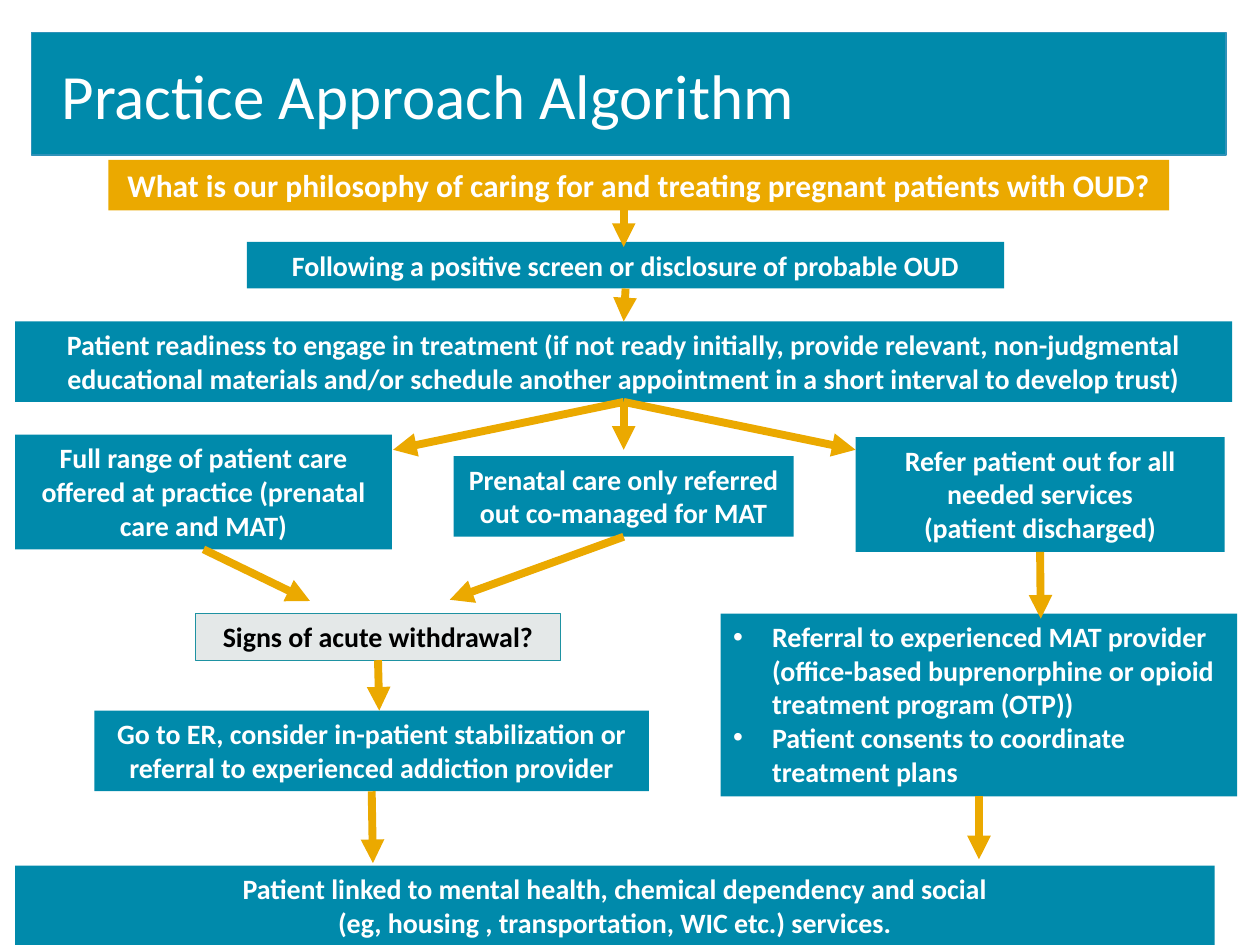
from lxml import etree
from pptx import Presentation
from pptx import util as u
from pptx.dml.color import RGBColor
from pptx.enum import shapes, text
from pptx.oxml.ns import qn

PX = 9144
TEAL = RGBColor(0x00, 0x8A, 0xAB)
TEAL_EDGE = RGBColor(0x30, 0x92, 0xB9)
GOLD = RGBColor(0xEB, 0xA9, 0x00)
GREY = RGBColor(0xE4, 0xE8, 0xE8)
GREY_EDGE = RGBColor(0x1E, 0x92, 0xA2)
WHITE = RGBColor(0xFF, 0xFF, 0xFF)
BLACK = RGBColor(0x00, 0x00, 0x00)


def px(*lengths):
    """Turn px lengths into EMU."""
    return [u.Emu(round(n * PX)) for n in lengths]


def add_run(p, words, size, color, bold=True):
    """Add one styled run to a paragraph."""
    r = p.add_run()
    r.text = words
    r.font.name = "Calibri"
    r.font.size = u.Pt(size)
    r.font.bold = bold
    r.font.color.rgb = color


def add_bullet(p):
    """Give a paragraph a round bullet with a hanging indent."""
    pPr = p._p.get_or_add_pPr()
    indent = px(31)[0]
    pPr.set("marL", str(indent))
    pPr.set("indent", str(-indent))
    etree.SubElement(pPr, qn("a:buFont")).set("typeface", "Arial")
    etree.SubElement(pPr, qn("a:buChar")).set("char", "•")


def add_box(s, box, lines=(), fill=TEAL, edge=None, color=WHITE, size=16, bullets=False):
    """Draw a filled rectangle holding one paragraph per line."""
    sp = s.shapes.add_shape(shapes.MSO_SHAPE.RECTANGLE, *px(*box))
    sp.shadow.inherit = False
    sp.fill.solid()
    sp.fill.fore_color.rgb = fill
    if edge:
        sp.line.color.rgb = edge
        sp.line.width = u.Pt(0.75)
    else:
        sp.line.fill.background()
    tf = sp.text_frame
    tf.word_wrap = True
    tf.vertical_anchor = text.MSO_ANCHOR.TOP
    for i, line in enumerate(lines):
        p = tf.paragraphs[0] if i == 0 else tf.add_paragraph()
        p.alignment = text.PP_ALIGN.LEFT if bullets else text.PP_ALIGN.CENTER
        if bullets:
            add_bullet(p)
        add_run(p, line, size, color)
    return sp


def add_arrow(s, end, start=None, source=None, target=None):
    """Draw a gold arrow from a point or a box's bottom to a point or a box's top."""
    cxn = s.shapes.add_connector(
        shapes.MSO_CONNECTOR.STRAIGHT, *px(*(start or end)), *px(*end))
    if source:
        cxn.begin_connect(source, 2)
    if target:
        cxn.end_connect(target, 0)
    cxn.line.color.rgb = GOLD
    cxn.line.width = u.Pt(4.5)
    etree.SubElement(cxn.line._get_or_add_ln(), qn("a:tailEnd")).set("type", "triangle")
    etree.SubElement(cxn._element.spPr, qn("a:effectLst"))


def title_banner(s, box):
    """Draw the title on its banner."""
    x, y, w, h = box
    add_box(s, box, edge=TEAL_EDGE)
    tf = s.shapes.add_textbox(*px(x + 14, y + 10, w - 14, h - 19)).text_frame
    tf.word_wrap = True
    tf.vertical_anchor = text.MSO_ANCHOR.MIDDLE
    add_run(tf.paragraphs[0], "Practice Approach Algorithm", 36, WHITE, bold=False)


def screening(s, box):
    """Draw the steps from philosophy to readiness and return the last one."""
    x, y, w, h = box
    add_box(s, (x + 74, y, 842, 40),
            ["What is our philosophy of caring for and treating pregnant patients with OUD?"],
            fill=GOLD, size=18)
    screen = add_box(s, (x + 184, y + 65, 601, 37),
                     ["Following a positive screen or disclosure of probable OUD"])
    ready = add_box(s, (x, y + h - 64, w, 64), [
        "Patient readiness to engage in treatment (if not ready initially, provide relevant, "
        "non-judgmental educational materials and/or schedule another appointment in a short "
        "interval to develop trust)"])
    mid = x + w / 2
    add_arrow(s, (mid, y + 69), start=(mid, y + 35))
    add_arrow(s, (mid, y + 128), source=screen, target=ready)
    return ready


def care_options(s, box, ready):
    """Draw the three care options and return them from left to right."""
    x, y, w, h = box
    full = add_box(s, (x, y, 299, 91),
                   ["Full range of patient care offered at practice (prenatal care and MAT)"])
    shared = add_box(s, (x + 348, y + 17, 270, 64),
                     ["Prenatal care only referred out co-managed for MAT"])
    refer = add_box(s, (x + w - 293, y + 2, 293, 91),
                    ["Refer patient out for all needed services", "(patient discharged)"])
    for tip in (300, 483, w - 293):
        add_arrow(s, (x + tip, y + 12), source=ready)
    return full, shared, refer


def withdrawal(s, box, full, shared):
    """Draw the acute withdrawal path and return its last step."""
    x, y, w, h = box
    signs = add_box(s, (x + 80, y, 290, 37), ["Signs of acute withdrawal?"],
                    fill=GREY, edge=GREY_EDGE, color=BLACK)
    er = add_box(s, (x, y + h - 64, w, 64), [
        "Go to ER, consider in-patient stabilization or referral to experienced addiction provider"])
    add_arrow(s, (x + 171, y - 10), source=full)
    add_arrow(s, (x + 282, y - 11), source=shared)
    add_arrow(s, (x + 226, y + h - 64), source=signs)
    return er


def referral(s, box, refer):
    """Draw the referral list and return it."""
    x, y, w, h = box
    sp = add_box(s, box, [
        "Referral to experienced MAT provider (office-based buprenorphine or opioid "
        "treatment program (OTP))",
        "Patient consents to coordinate treatment plans"], bullets=True)
    add_arrow(s, (x + 254, y + 4), source=refer)
    return sp


def linked_services(s, box, er, referred):
    """Draw the closing step and the arrows that lead to it."""
    x, y, w, h = box
    add_box(s, box, ["Patient linked to mental health, chemical dependency and social",
                     "(eg, housing , transportation, WIC etc.) services."])
    add_arrow(s, (x + 284, y - 2), source=er)
    add_arrow(s, (x + 765, y - 5), source=referred)


def main():
    """Build the slide and save it."""
    prs = Presentation()
    prs.slide_width, prs.slide_height = px(1000, 750)
    s = prs.slides.add_slide(prs.slide_layouts[6])
    title_banner(s, (25, 26, 948, 97))
    ready = screening(s, (12, 127, 966, 192))
    full, shared, refer = care_options(s, (12, 345, 960, 93), ready)
    er = withdrawal(s, (75, 487, 440, 141), full, shared)
    referred = referral(s, (572, 487, 410, 145), refer)
    linked_services(s, (12, 687, 952, 64), er, referred)
    prs.save("out.pptx")


if __name__ == "__main__":
    main()
